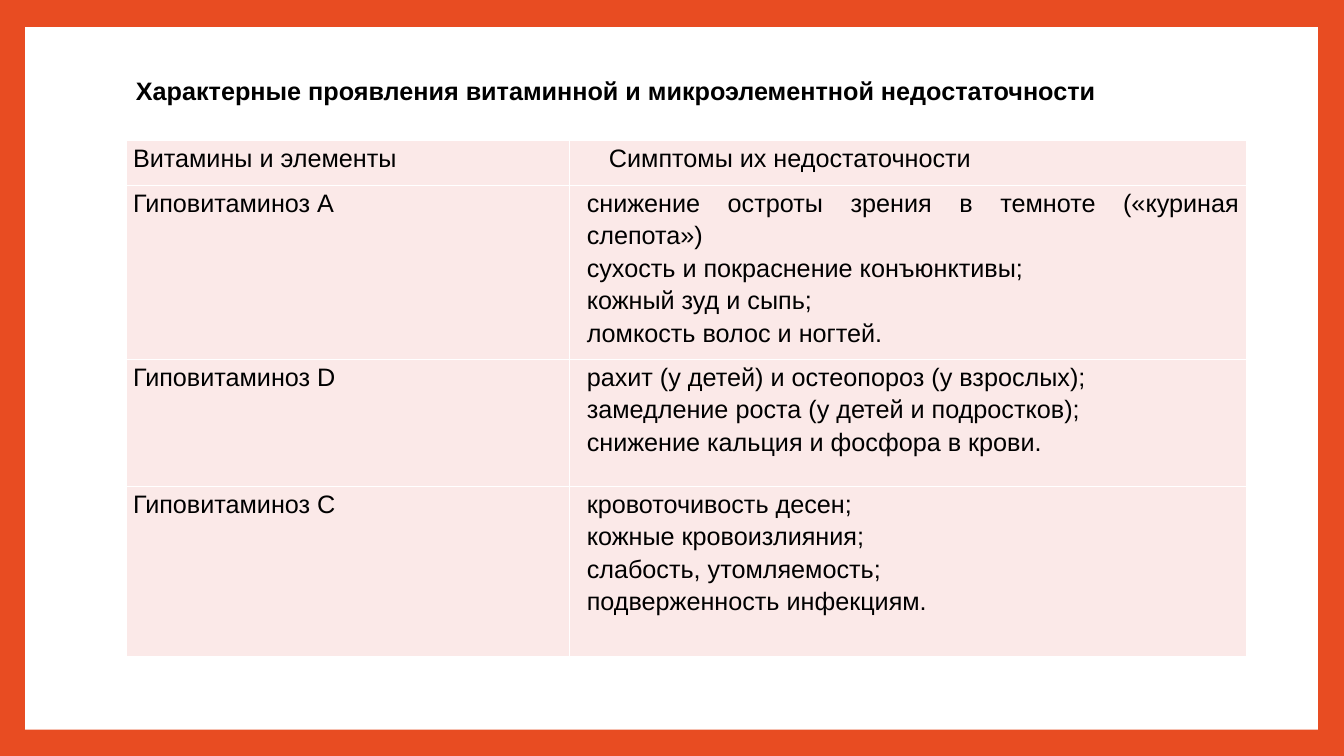
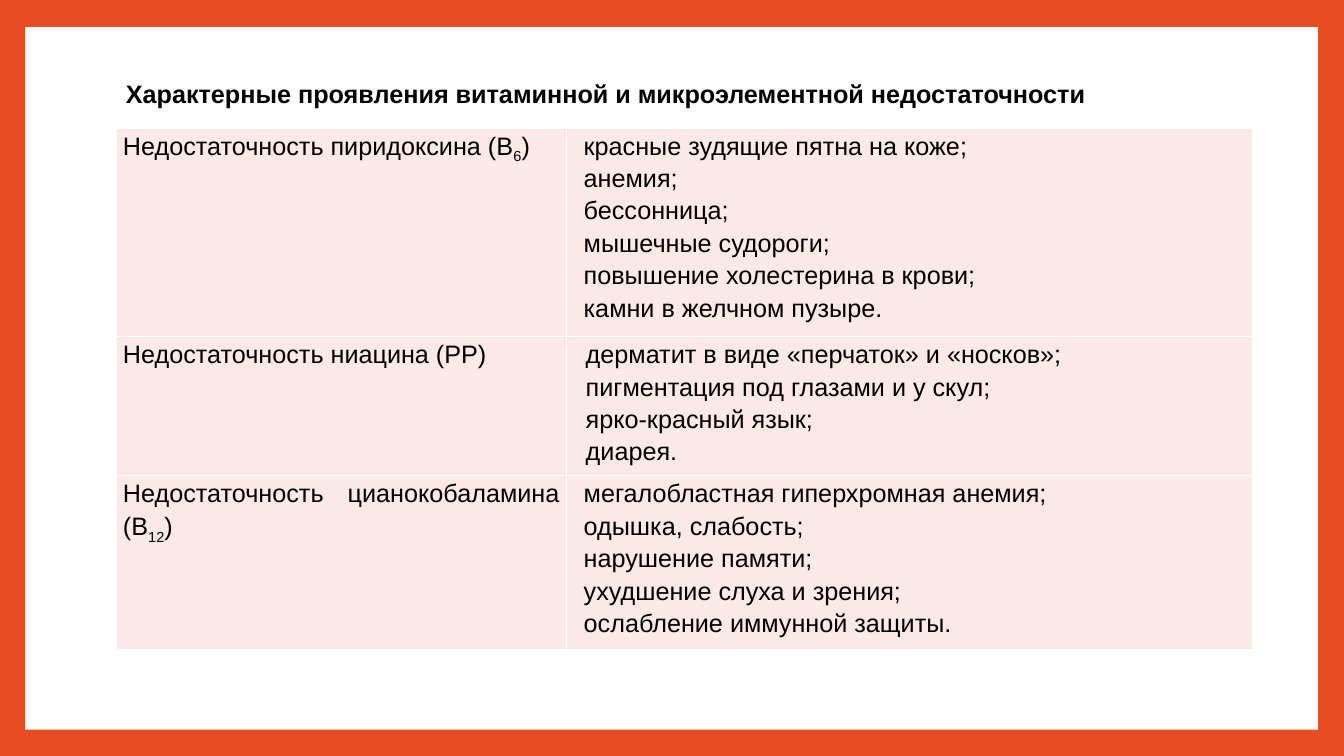
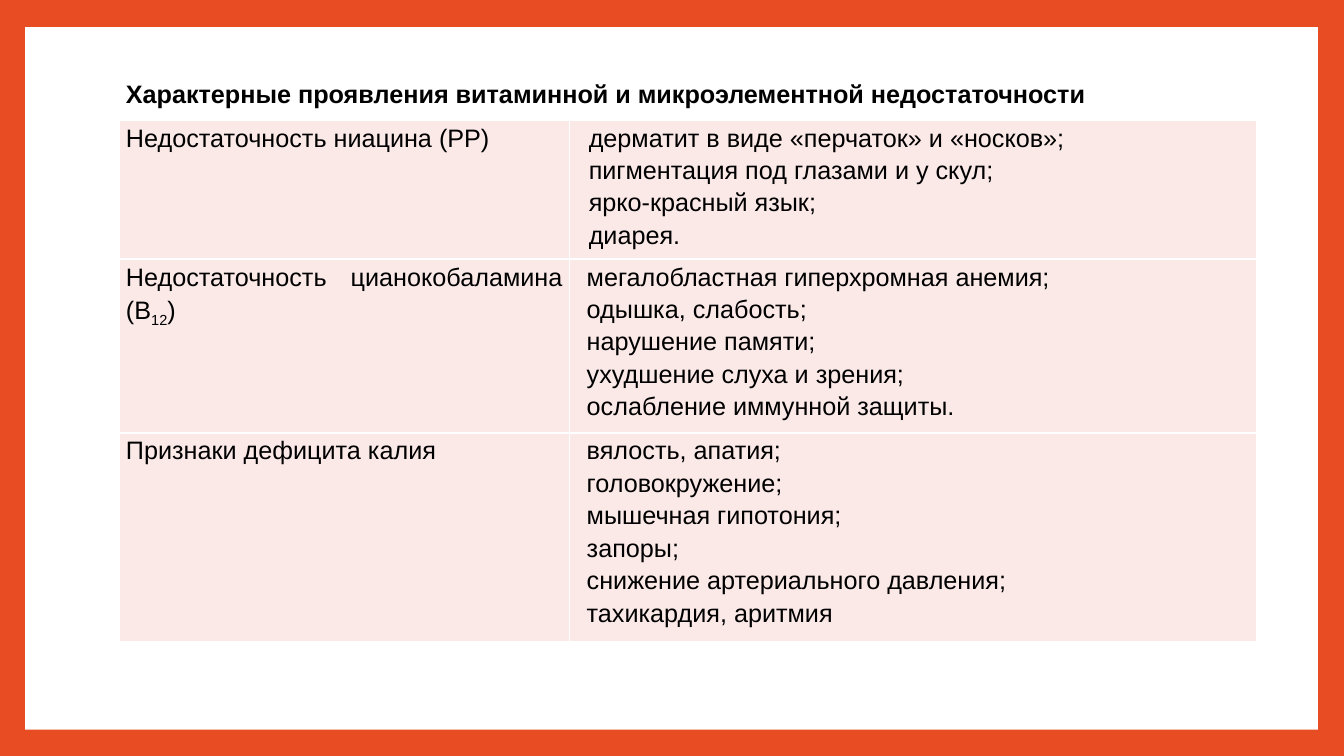
from lxml.etree import SubElement
from pptx import Presentation
from pptx.dml.color import RGBColor as RGB
from pptx.enum.shapes import MSO_SHAPE as SHAPE
from pptx.enum.text import MSO_ANCHOR as ANCHOR, PP_ALIGN as ALIGN
from pptx.oxml.ns import qn
from pptx.util import Inches, Pt

HUES = {"back": "E84C22", "page": "FFFFFF", "cell": "FBE9E8", "line": "FFFFFF", "text": "000000"}
FONT, SIZE = "Arial", 18
TITLE = "Характерные проявления витаминной и микроэлементной недостаточности"

# A row is: left cell, indent of the right cell, lines of the right cell.
# Text between bars is set as a subscript.
NIACIN = ("Недостаточность ниацина (РР)", 0.12, [
    "дерматит в виде «перчаток» и «носков»;",
    "пигментация под глазами и у скул;",
    "ярко-красный язык;",
    "диарея."])
COBAL = ("Недостаточность цианокобаламина (В|12|)", 0.1, [
    "мегалобластная гиперхромная анемия;",
    "одышка, слабость;",
    "нарушение памяти;",
    "ухудшение слуха и зрения;",
    "ослабление иммунной защиты."])

SLIDES = [
    {"title": (1.25, 0.18), "table": (1.25, 1.39), "cols": (4.4, 6.71),
     "heights": (0.45, 1.69, 1.26, 1.69),
     "rows": [
         ("Витамины и элементы", 0.32, ["Симптомы их недостаточности"]),
         ("Гиповитаминоз А", 0.1, [
             "снижение остроты зрения в темноте («куриная слепота»)",
             "сухость и покраснение конъюнктивы;",
             "кожный зуд и сыпь;",
             "ломкость волос и ногтей."]),
         ("Гиповитаминоз D", 0.1, [
             "рахит (у детей) и остеопороз (у взрослых);",
             "замедление роста (у детей и подростков);",
             "снижение кальция и фосфора в крови."]),
         ("Гиповитаминоз С", 0.1, [
             "кровоточивость десен;",
             "кожные кровоизлияния;",
             "слабость, утомляемость;",
             "подверженность инфекциям."])]},
    {"title": (1.15, 0.21), "table": (1.15, 1.27), "cols": (4.47, 6.8),
     "heights": (1.93, 1.28, 1.61),
     "rows": [
         ("Недостаточность пиридоксина (В|6|)", 0.1, [
             "красные зудящие пятна на коже;",
             "анемия;",
             "бессонница;",
             "мышечные судороги;",
             "повышение холестерина в крови;",
             "камни в желчном пузыре."]),
         NIACIN, COBAL]},
    {"title": (1.15, 0.21), "table": (1.18, 1.19), "cols": (4.47, 6.81),
     "heights": (1.28, 1.61, 1.93),
     "rows": [
         NIACIN, COBAL,
         ("Признаки дефицита калия", 0.1, [
             "вялость, апатия;",
             "головокружение;",
             "мышечная гипотония;",
             "запоры;",
             "снижение артериального давления;",
             "тахикардия, аритмия"])]},
]


def style(para, space, bold=False):
    para.line_spacing = space
    font = para.font
    font.name, font.size, font.bold = FONT, Pt(SIZE), bold
    font.color.rgb = RGB.from_string(HUES["text"])


def fill_cell(cell, lines, indent):
    """Write the lines as paragraphs and give the cell its fill and borders."""
    cell.margin_left = cell.margin_right = Inches(0.07)
    cell.margin_top = cell.margin_bottom = 0
    frame = cell.text_frame
    for i, line in enumerate(lines):
        para = frame.add_paragraph() if i else frame.paragraphs[0]
        para.alignment = ALIGN.JUSTIFY
        style(para, 1.15)
        props = para._p.get_or_add_pPr()
        props.set("marL", str(Inches(indent)))
        props.set("indent", "0")
        for j, part in enumerate(line.split("|")):
            run = para.add_run()
            run.text = part
            if j % 2:
                run._r.get_or_add_rPr().set("baseline", "-25000")
    props = cell._tc.get_or_add_tcPr()
    for side in ("lnL", "lnR", "lnT", "lnB"):
        edge = SubElement(props, qn("a:" + side), w=str(Pt(1)))
        paint = SubElement(edge, qn("a:solidFill"))
        SubElement(paint, qn("a:srgbClr"), val=HUES["line"])
    cell.fill.solid()
    cell.fill.fore_color.rgb = RGB.from_string(HUES["cell"])


prs = Presentation()
prs.slide_width, prs.slide_height = Inches(13.33), Inches(7.5)
back = prs.slide_master.background.fill
back.solid()
back.fore_color.rgb = RGB.from_string(HUES["back"])

for data in SLIDES:
    slide = prs.slides.add_slide(prs.slide_layouts[6])
    page = slide.shapes.add_shape(SHAPE.RECTANGLE, Inches(0.25), Inches(0.27), Inches(12.82), Inches(6.97))
    page.shadow.inherit = False
    page.fill.solid()
    page.fill.fore_color.rgb = RGB.from_string(HUES["page"])
    page.line.fill.background()

    left, top = data["title"]
    box = slide.shapes.add_textbox(Inches(left), Inches(top), Inches(10.8), Inches(1.48))
    frame = box.text_frame
    frame.word_wrap = True
    frame.vertical_anchor = ANCHOR.MIDDLE
    frame.text = TITLE
    style(frame.paragraphs[0], 0.9, bold=True)

    left, top = data["table"]
    cols, tall = data["cols"], data["heights"]
    table = slide.shapes.add_table(len(tall), len(cols), Inches(left), Inches(top),
                                   Inches(sum(cols)), Inches(sum(tall))).table
    table.first_row = table.horz_banding = False
    for col, width in zip(table.columns, cols):
        col.width = Inches(width)
    for row, height, (name, indent, signs) in zip(table.rows, tall, data["rows"]):
        row.height = Inches(height)
        fill_cell(row.cells[0], [name], 0)
        fill_cell(row.cells[1], signs, indent)

prs.save("out.pptx")
